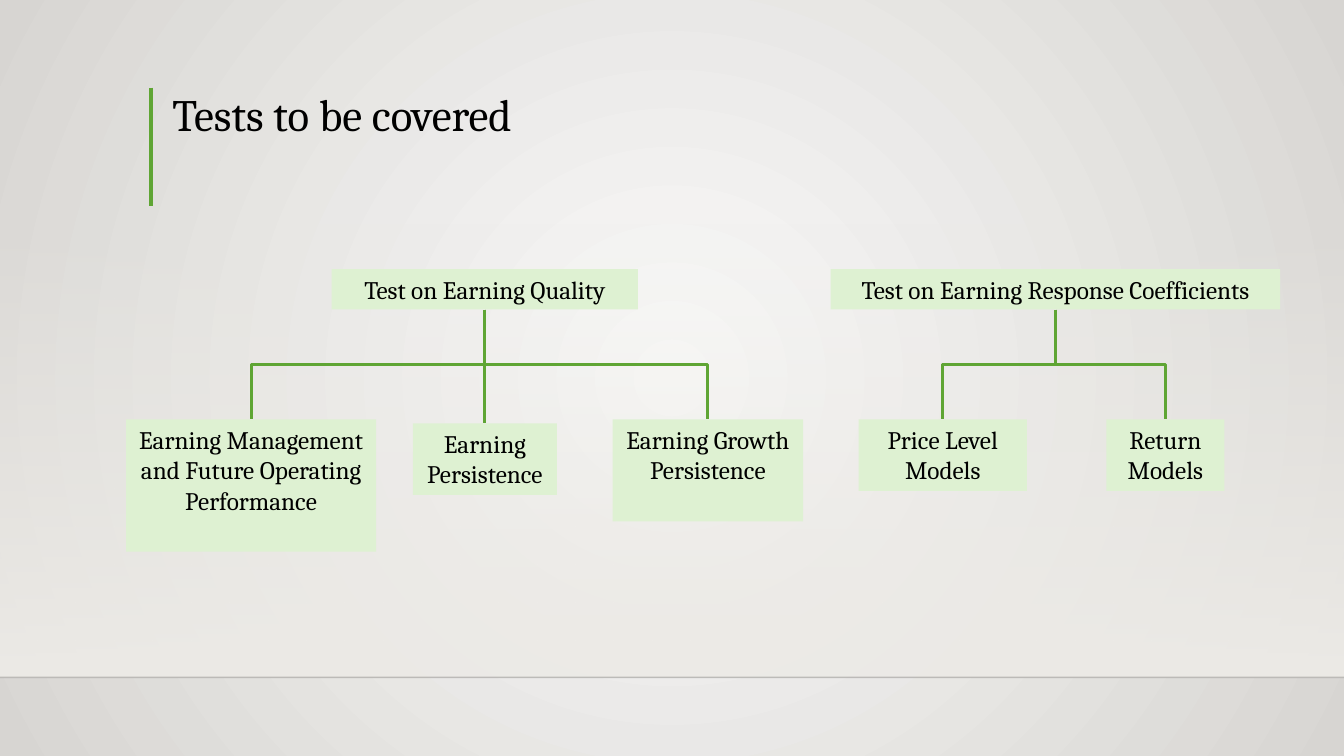
from lxml import etree
from pptx import Presentation
from pptx import util as u
from pptx.dml.color import RGBColor
from pptx.enum import shapes, text
from pptx.oxml.ns import qn

# Content: (label, centre x, top, width, height) in cm
TITLE = "Tests to be covered"
TESTS = [
    (("Test on Earning Quality", 12.22, 6.78, 7.72, 1.02), [
        ("Earning Management and Future Operating Performance", 6.33, 10.57, 6.3, 3.33),
        ("Earning Persistence", 12.22, 10.67, 3.63, 1.8),
        ("Earning Growth Persistence", 17.84, 10.57, 4.8, 2.57),
    ]),
    (("Test on Earning Response Coefficients", 26.6, 6.78, 11.33, 1.02), [
        ("Price Level Models", 23.76, 10.57, 4.24, 1.8),
        ("Return Models", 29.37, 10.57, 2.97, 1.8),
    ]),
]
GREEN, PALE_GREEN, BLACK = "5FA534", "DEF1D2", "000000"
FONT = "Cambria"
WIDTH, HEIGHT = 33.87, 19.05
FLOOR_Y = 17.07


def rgb(value):
    return RGBColor.from_string(value)


def set_gradient(fill, element, stops, direction, **attributes):
    """Replace the stops (position, colour, alpha) and direction of a gradient."""
    fill.gradient()
    gradient = next(element.iter(qn("a:gradFill")))
    for child in list(gradient):
        gradient.remove(child)
    stop_list = etree.SubElement(gradient, qn("a:gsLst"))
    for position, colour, alpha in stops:
        stop = etree.SubElement(stop_list, qn("a:gs"), pos=str(position * 1000))
        paint = etree.SubElement(stop, qn("a:srgbClr"), val=colour)
        etree.SubElement(paint, qn("a:alpha"), val=str(alpha * 1000))
    return etree.SubElement(gradient, qn(direction), **attributes)


def style_text(frame, words, size, align, frame_format):
    for name, value in frame_format.items():
        setattr(frame, name, value)
    frame.text = words
    paragraph = frame.paragraphs[0]
    paragraph.alignment = align
    for name, value in {"name": FONT, "size": u.Pt(size)}.items():
        setattr(paragraph.font, name, value)
    paragraph.font.color.rgb = rgb(BLACK)
    return paragraph


def add_line(kind, start, end, colour, weight):
    line = slide.shapes.add_connector(kind, *start, *end)
    line.line.color.rgb = rgb(colour)
    line.line.width = u.Pt(weight)
    etree.SubElement(line.element.spPr, qn("a:effectLst"))
    return line


def add_box(label, centre, top, width, height):
    box = slide.shapes.add_shape(
        shapes.MSO_SHAPE.RECTANGLE,
        u.Cm(centre - width / 2), u.Cm(top), u.Cm(width), u.Cm(height))
    box.shadow.inherit = False
    box.fill.solid()
    box.fill.fore_color.rgb = rgb(PALE_GREEN)
    box.line.fill.background()
    style_text(box.text_frame, label, 18, text.PP_ALIGN.CENTER, {
        "word_wrap": True,
        "vertical_anchor": text.MSO_ANCHOR.TOP,
        "auto_size": text.MSO_AUTO_SIZE.SHAPE_TO_FIT_TEXT,
    })
    return box


def join(parent, child):
    """Link the bottom of the parent to the top of the child."""
    x1, y1 = parent.left + parent.width // 2, parent.top + parent.height
    x2, y2 = child.left + child.width // 2, child.top
    across, down = abs(x2 - x1), y2 - y1
    straight = across < u.Cm(0.05)
    kind = shapes.MSO_CONNECTOR.STRAIGHT if straight else shapes.MSO_CONNECTOR.ELBOW
    link = add_line(kind, (x1, y1), (x2, y2), GREEN, 2.25)
    link.begin_connect(parent, 2)
    link.end_connect(child, 0)
    if straight:
        return
    # A vertical elbow is a horizontal one turned about its centre
    turned = {"left": (x1 + x2 - down) // 2, "top": (y1 + y2 - across) // 2,
              "width": down, "height": across}
    for name, value in turned.items():
        setattr(link, name, value)
    frame = link.element.spPr.find(qn("a:xfrm"))
    frame.set("rot", str((90 if x2 < x1 else 270) * 60000))
    frame.set("flipH", "0" if x2 < x1 else "1")


prs = Presentation()
prs.slide_width, prs.slide_height = u.Cm(WIDTH), u.Cm(HEIGHT)
slide = prs.slides.add_slide(prs.slide_layouts[5])

# Background and floor
glow = set_gradient(slide.background.fill, slide.element,
                    [(0, "FAFAF9", 100), (100, "D7D5D2", 100)], "a:path", path="circle")
etree.SubElement(glow, qn("a:fillToRect"), l="50000", t="50000", r="50000", b="50000")

wall = slide.shapes.add_shape(shapes.MSO_SHAPE.RECTANGLE, 0, u.Cm(5.6),
                              u.Cm(WIDTH), u.Cm(FLOOR_Y - 5.6))
wall.shadow.inherit = False
wall.line.fill.background()
set_gradient(wall.fill, wall.element, [(0, "EDEBE7", 0), (100, "EDEBE7", 100)],
             "a:lin", ang="5400000", scaled="0")

floor = add_line(shapes.MSO_CONNECTOR.STRAIGHT, (0, u.Cm(FLOOR_Y)),
                 (u.Cm(WIDTH), u.Cm(FLOOR_Y)), "000001", 1)
floor_colour = next(floor.element.spPr.iter(qn("a:srgbClr")))
etree.SubElement(floor_colour, qn("a:alpha"), val="20000")

# Title with its accent bar
add_line(shapes.MSO_CONNECTOR.STRAIGHT, (u.Cm(3.81), u.Cm(2.21)),
         (u.Cm(3.81), u.Cm(5.18)), GREEN, 3)
title = slide.shapes.title
for side, length in {"left": 4.09, "top": 1.98, "width": 26.44, "height": 1.7}.items():
    setattr(title, side, u.Cm(length))
heading = style_text(title.text_frame, TITLE, 32, text.PP_ALIGN.LEFT, {
    "word_wrap": True,
    "vertical_anchor": text.MSO_ANCHOR.BOTTOM,
    "auto_size": text.MSO_AUTO_SIZE.NONE,
})
heading.line_spacing = 0.9

# Trees of tests
for test, branches in TESTS:
    root = add_box(*test)
    for branch in branches:
        join(root, add_box(*branch))

prs.save("out.pptx")
